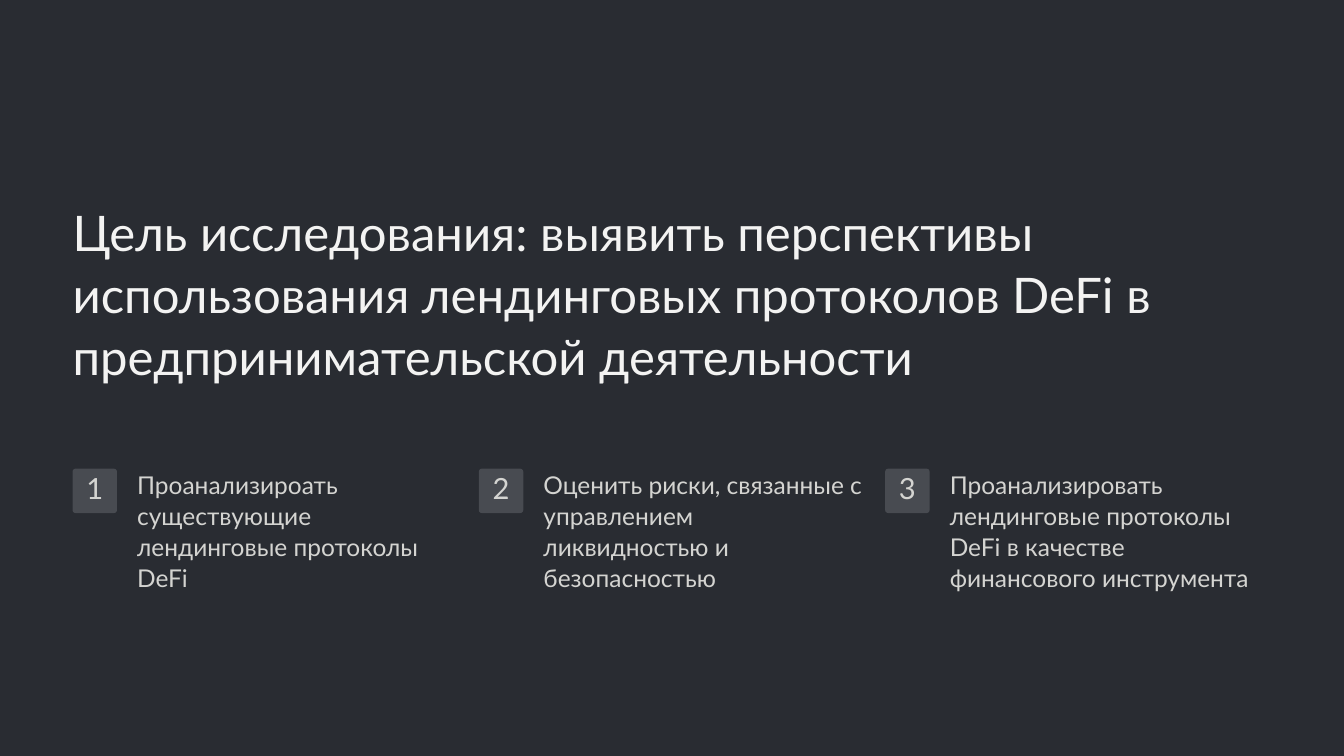
from pptx import Presentation
from pptx.dml.color import RGBColor
from pptx.enum.shapes import MSO_SHAPE
from pptx.enum.text import PP_ALIGN
from pptx.util import Inches, Pt

ROUNDED = MSO_SHAPE.ROUNDED_RECTANGLE
LEFT, CENTER = PP_ALIGN.LEFT, PP_ALIGN.CENTER

BACKGROUND = RGBColor(0x29, 0x2C, 0x32)
TILE = RGBColor(0x48, 0x4B, 0x51)
TITLE_COLOR = RGBColor(0xF3, 0xF3, 0xF2)
BODY_COLOR = RGBColor(0xD4, 0xD4, 0xD1)
FONT = "Lato"

MARGIN = 0.72
CONTENT_WIDTH = 11.89
GOAL_GAP = 0.2
TILE_SIZE = 0.44

TITLE = ("Цель исследования: выявить перспективы использования "
         "лендинговых протоколов DeFi в предпринимательской деятельности")
GOALS = [
    "Проанализироать существующие лендинговые протоколы DeFi",
    "Оценить риски, связанные с управлением ликвидностью и безопасностью",
    "Проанализировать лендинговые протоколы DeFi в качестве финансового инструмента",
]


def add_text(page, text, left, top, width, height, *, size, spacing,
             color=BODY_COLOR, align=LEFT, wrap=True):
    box = page.shapes.add_textbox(
        Inches(left), Inches(top), Inches(width), Inches(height))
    frame = box.text_frame
    frame.word_wrap = wrap
    frame.margin_left = frame.margin_right = 0
    frame.margin_top = frame.margin_bottom = 0
    para = frame.paragraphs[0]
    para.alignment = align
    para.line_spacing = Pt(spacing)
    span = para.add_run()
    span.text = text
    span.font.name = FONT
    span.font.size = Pt(size)
    span.font.color.rgb = color


def add_title(page, left, top, width, height):
    add_text(page, TITLE, left, top, width, height,
             size=35, spacing=44.2, color=TITLE_COLOR)


def add_goal(page, number, text, left, top, width, height):
    tile = page.shapes.add_shape(
        ROUNDED, Inches(left), Inches(top), Inches(TILE_SIZE), Inches(TILE_SIZE))
    tile.adjustments[0] = 0.067
    tile.shadow.inherit = False
    tile.fill.solid()
    tile.fill.fore_color.rgb = TILE
    tile.line.fill.background()
    add_text(page, str(number), left + 0.13, top + 0.07, 0.18, 0.29,
             size=20.8, spacing=20.8, align=CENTER, wrap=False)
    indent = TILE_SIZE + 0.2
    add_text(page, text, left + indent, top, width - indent, height,
             size=17.5, spacing=22.1)


def add_goals(page, left, top, width, height):
    goal_width = (width - GOAL_GAP * (len(GOALS) - 1)) / len(GOALS)
    for index, text in enumerate(GOALS):
        add_goal(page, index + 1, text, left + index * (goal_width + GOAL_GAP),
                 top, goal_width, height)


def main():
    deck = Presentation()
    deck.slide_width, deck.slide_height = Inches(13.33), Inches(7.5)
    page = deck.slides.add_slide(deck.slide_layouts[6])
    page.background.fill.solid()
    page.background.fill.fore_color.rgb = BACKGROUND
    add_title(page, MARGIN, 1.98, CONTENT_WIDTH, 1.84)
    add_goals(page, MARGIN, 4.65, CONTENT_WIDTH, 1.23)
    deck.save("out.pptx")


if __name__ == "__main__":
    main()
